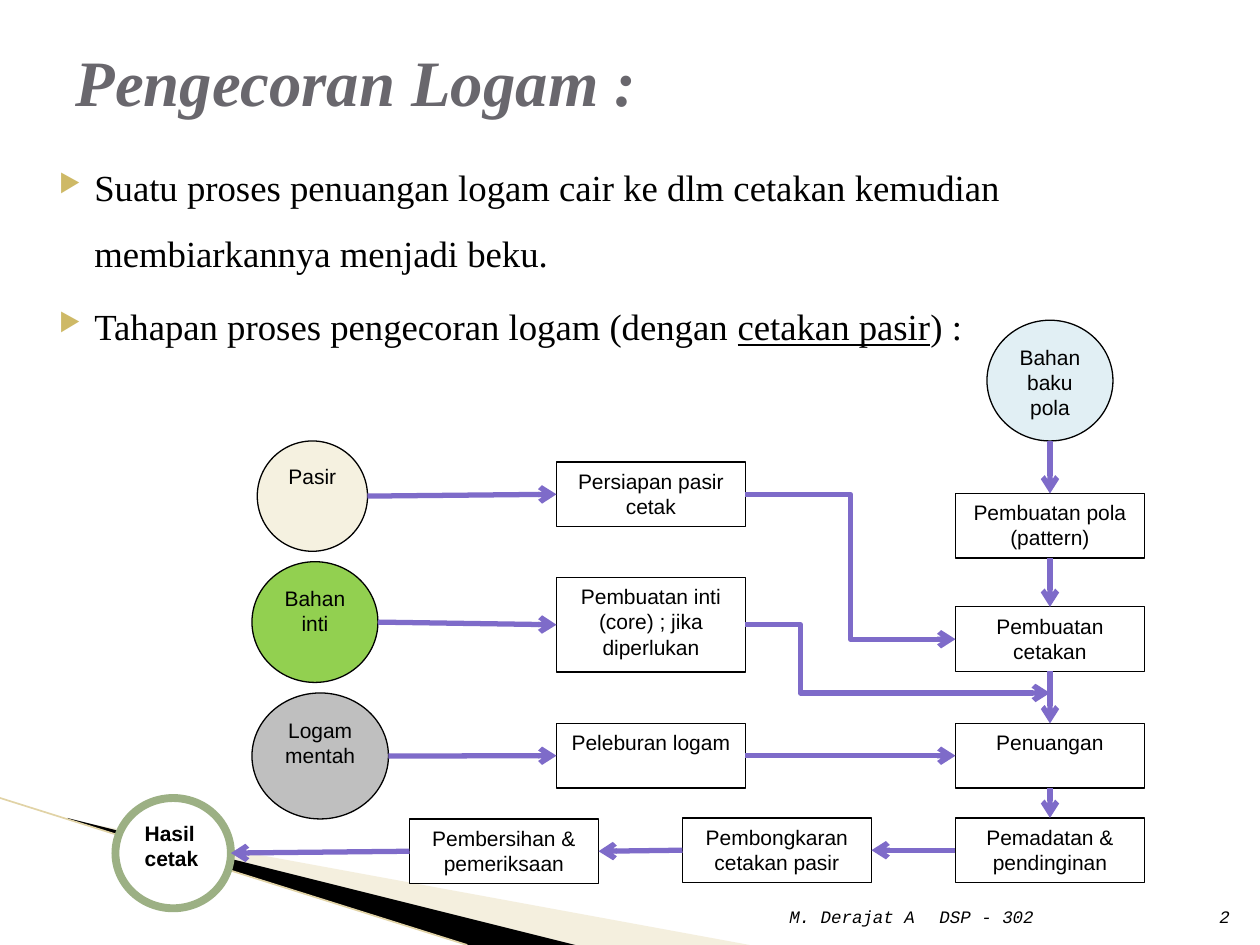
import dataclasses

import lxml.etree
import pptx
import pptx.dml.color
import pptx.enum.shapes
import pptx.enum.text
import pptx.oxml.ns
import pptx.util


@dataclasses.dataclass(frozen=True)
class Theme:
    serif: str = "Times New Roman"
    sans: str = "Arial"
    mono: str = "Courier New"
    title_size: int = 37
    body_size: int = 21
    node_size: int = 12
    footer_size: int = 10
    ink: str = "000000"
    paper: str = "FFFFFF"
    title: str = "69676D"
    bullet: str = "CEB966"
    arrow: str = "7E6BC9"
    wedge: str = "E4D7AD"
    wedge_edge: str = "E1D3A6"
    sand: str = "F5F1E0"
    core: str = "92D050"
    metal: str = "BFBFBF"
    pattern: str = "E1EFF4"
    result_ring: str = "9CB084"


theme = Theme()
rgb = pptx.dml.color.RGBColor.from_string
qn = pptx.oxml.ns.qn
Shape = pptx.enum.shapes.MSO_SHAPE
Connector = pptx.enum.shapes.MSO_CONNECTOR
Align = pptx.enum.text.PP_ALIGN
Anchor = pptx.enum.text.MSO_ANCHOR

deck = pptx.Presentation()
deck.slide_width = pptx.util.Inches(10)
deck.slide_height = pptx.util.Inches(7.5)
page = deck.slides.add_slide(deck.slide_layouts[5])

# The grid has 120 columns and 90 rows of equal size.
cell = deck.slide_width // 120


def add_span(para, text, font, size, color=theme.ink):
    """Append one formatted run and return its font for further styling."""
    span = para.add_run()
    span.text = text
    span.font.name = font
    span.font.size = pptx.util.Pt(size)
    span.font.color.rgb = rgb(color)
    return span.font


def add_line(kind, start, end, color, width):
    """Draw a shadowless line between two grid points; return it and its a:ln."""
    line = page.shapes.add_connector(
        kind, *(round(value * cell) for value in (*start, *end)))
    line.line.color.rgb = rgb(color)
    line.line.width = pptx.util.Pt(width)
    properties = line._element.spPr
    lxml.etree.SubElement(properties, qn("a:effectLst"))
    return line, properties.find(qn("a:ln"))


# Corner decoration
wedges = [
    (theme.wedge, 40, [(6.6, 78.1), (71.4, 90), (54.7, 90), (6.6, 78)]),
    (theme.ink, 100, [(6.4, 77.9), (54.8, 90), (44.6, 90), (6.5, 78)]),
]
for color, opacity, corners in wedges:
    points = [(round(x * cell), round(y * cell)) for x, y in corners]
    builder = page.shapes.build_freeform(*points[0], scale=1.0)
    builder.add_line_segments(points[1:], close=True)
    wedge = builder.convert_to_shape()
    wedge.shadow.inherit = False
    wedge.fill.solid()
    wedge.fill.fore_color.rgb = rgb(color)
    wedge.line.fill.background()
    if opacity < 100:
        tone = wedge._element.spPr.find(qn("a:solidFill"))[0]
        lxml.etree.SubElement(tone, qn("a:alpha"), val=str(opacity * 1000))
add_line(Connector.STRAIGHT, (0, 76), (44.5, 90), theme.wedge_edge, 0.95)

# Title
title = page.shapes.title
title.left, title.top, title.width, title.height = (
    round(value * cell) for value in (6, 3, 108, 9.4))
title.text_frame.vertical_anchor = Anchor.MIDDLE
para = title.text_frame.paragraphs[0]
para.alignment = Align.LEFT
font = add_span(para, "Pengecoran Logam :", theme.serif, theme.title_size, theme.title)
font.bold = font.italic = True

# Bulleted text
body = page.shapes.add_textbox(3 * cell, 13 * cell, 114 * cell, 72 * cell).text_frame
body.word_wrap = True
bullets = [
    [("Suatu proses penuangan logam cair ke dlm cetakan kemudian "
      "membiarkannya menjadi beku.", False)],
    [("Tahapan proses pengecoran logam (dengan ", False),
     ("cetakan pasir", True), (") :", False)],
]
for index, spans in enumerate(bullets):
    para = body.add_paragraph() if index else body.paragraphs[0]
    para.line_spacing = 1.5
    if index:
        para.space_before = pptx.util.Pt(4)
    properties = para._p.get_or_add_pPr()
    properties.set("marL", str(pptx.util.Inches(0.4)))
    properties.set("indent", str(pptx.util.Inches(-0.28)))
    bullet_color = lxml.etree.SubElement(properties, qn("a:buClr"))
    lxml.etree.SubElement(bullet_color, qn("a:srgbClr"), val=theme.bullet)
    lxml.etree.SubElement(properties, qn("a:buSzPct"), val="68000")
    lxml.etree.SubElement(properties, qn("a:buChar"), char="▶")
    for text, underlined in spans:
        font = add_span(para, text, theme.serif, theme.body_size)
        if underlined:
            font.underline = True

# Flow chart nodes: name, text, left, top, width, height, fill
left_steps, right_steps, step_width, step_height = 53, 91, 18, 6.15
steps = [
    ("core", "Pembuatan inti (core) ; jika diperlukan", left_steps, 55, 9),
    ("pattern", "Pembuatan pola (pattern)", right_steps, 47, step_height),
    ("sand", "Persiapan pasir cetak", left_steps, 44, step_height),
    ("mould", "Pembuatan cetakan", right_steps, 57.8, step_height),
    ("melting", "Peleburan logam", left_steps, 68.9, step_height),
    ("pouring", "Penuangan", right_steps, 68.9, step_height),
    ("cooling", "Pemadatan & pendinginan", right_steps, 77.9, step_height),
    ("shakeout", "Pembongkaran cetakan pasir", 65, 77.9, step_height),
    ("cleaning", "Pembersihan & pemeriksaan", 39, 78, step_height),
]
materials = [
    ("raw sand", "Pasir", 24.5, 42, 10.5, 10.5, theme.sand),
    ("raw core", "Bahan inti", 24, 53.5, 12, 11.5, theme.core),
    ("raw metal", "Logam mentah", 24, 66, 13, 12, theme.metal),
    ("result", "Hasil cetak", 11, 76, 11, 10.5, theme.paper),
    ("raw pattern", "Bahan baku pola", 94, 30.5, 12, 11.5, theme.pattern),
]
nodes = [(Shape.RECTANGLE, name, text, x, y, step_width, height, theme.paper)
         for name, text, x, y, height in steps]
nodes += [(Shape.OVAL, *material) for material in materials]
sides = {}
for kind, name, text, x, y, width, height, fill in nodes:
    node = page.shapes.add_shape(
        kind, *(round(value * cell) for value in (x, y, width, height)))
    node.shadow.inherit = False
    node.fill.solid()
    node.fill.fore_color.rgb = rgb(fill)
    is_result = name == "result"
    node.line.color.rgb = rgb(theme.result_ring if is_result else theme.ink)
    node.line.width = pptx.util.Pt(4.5 if is_result else 0.75)
    node.text_frame.word_wrap = True
    node.text_frame.vertical_anchor = Anchor.TOP
    para = node.text_frame.paragraphs[0]
    para.alignment = Align.LEFT if is_result else Align.CENTER
    font = add_span(para, text, theme.sans, theme.node_size)
    if is_result:
        font.bold = True
    sides[name] = {"left": (x, y + height / 2), "right": (x + width, y + height / 2),
                   "top": (x + width / 2, y), "bottom": (x + width / 2, y + height)}

# Arrows: start, end, and the share of the width at which a bent arrow turns
flows = [
    ("pouring", "bottom", "cooling", "top"),
    ("melting", "right", "pouring", "left"),
    ("raw metal", "right", "melting", "left"),
    ("cooling", "left", "shakeout", "right"),
    ("shakeout", "left", "cleaning", "right"),
    ("cleaning", "left", "result", "right"),
    ("mould", "bottom", "pouring", "top"),
    ("pattern", "bottom", "mould", "top"),
    ("raw pattern", "bottom", "pattern", "top"),
    ("raw core", "right", "core", "left"),
    ("raw sand", "right", "sand", "left"),
]
arrows = [(sides[source][out], sides[target][into], None)
          for source, out, target, into in flows]
arrows += [(sides["sand"]["right"], sides["mould"]["left"], 0.5),
           (sides["core"]["right"], (100, 66), 0.18)]
for start, end, turn in arrows:
    kind = Connector.ELBOW if turn else Connector.STRAIGHT
    arrow, stroke = add_line(kind, start, end, theme.arrow, 3)
    lxml.etree.SubElement(stroke, qn("a:tailEnd"), type="arrow")
    if turn:
        guides = arrow._element.spPr.find(qn("a:prstGeom")).get_or_add_avLst()
        lxml.etree.SubElement(guides, qn("a:gd"), name="adj1",
                              fmla=f"val {round(turn * 100000)}")

# Footer
footers = [
    ("2", 113.5, 4.8, Align.RIGHT),
    ("M. Derajat A", 57.5, 30.8, Align.RIGHT),
    ("DSP - 302", 88.3, 25.2, Align.LEFT),
]
for text, x, width, alignment in footers:
    box = page.shapes.add_textbox(
        *(round(value * cell) for value in (x, 84.1, width, 4.8)))
    box.text_frame.word_wrap = True
    box.text_frame.vertical_anchor = Anchor.BOTTOM
    para = box.text_frame.paragraphs[0]
    para.alignment = alignment
    add_span(para, text, theme.mono, theme.footer_size).italic = True

deck.save("out.pptx")
